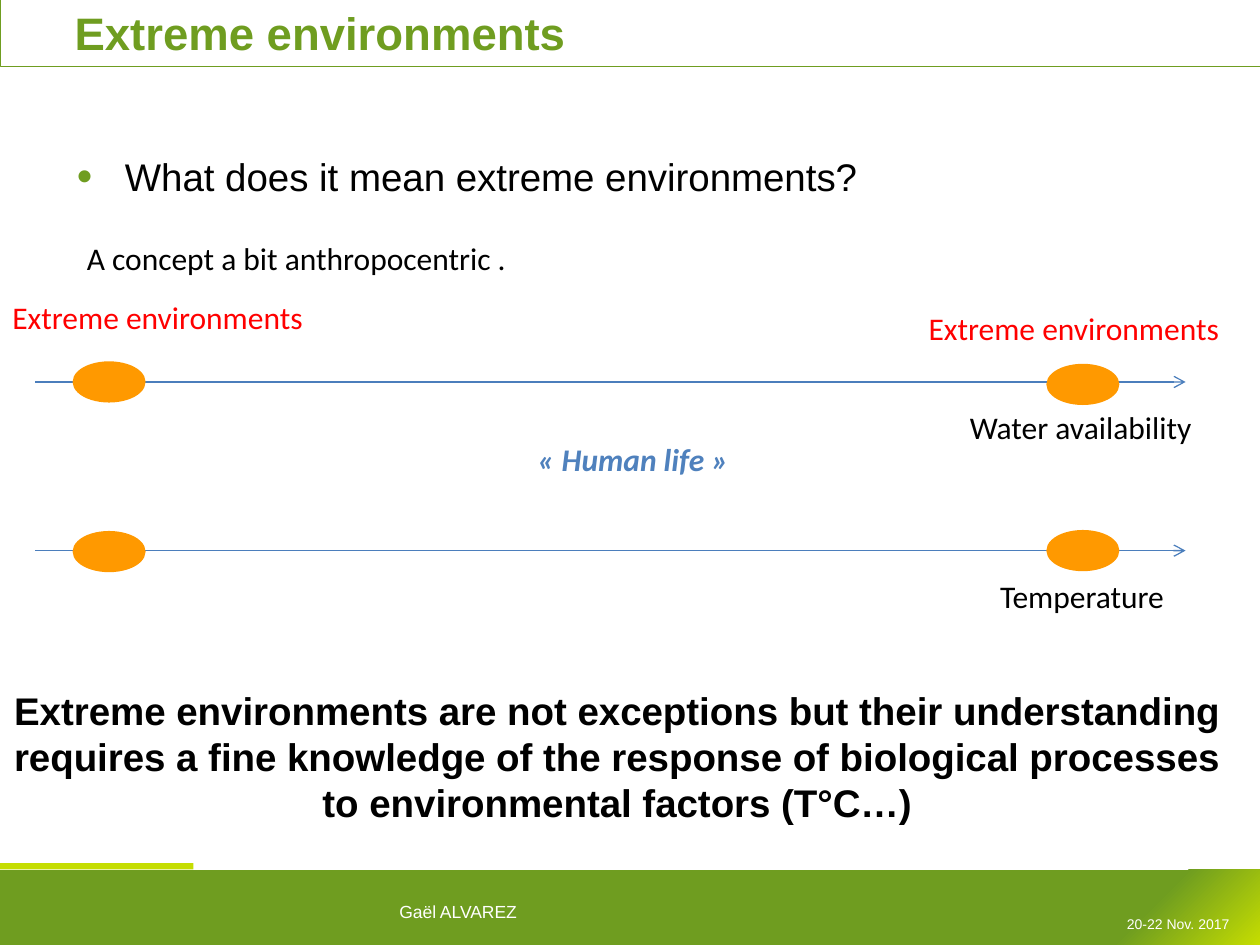
from lxml.etree import SubElement
from pptx import Presentation
from pptx.dml.color import RGBColor
from pptx.enum.shapes import MSO_CONNECTOR as Connector, MSO_SHAPE as Shape
from pptx.enum.text import MSO_ANCHOR as Anchor, MSO_AUTO_SIZE as AutoSize, PP_ALIGN as Align
from pptx.oxml.ns import qn
from pptx.util import Cm, Pt

COLORS = {
    "green": "6F9D20",
    "lime": "C5DD01",
    "white": "FFFFFF",
    "black": "000000",
    "red": "FF0000",
    "blue": "4F81BD",
    "axis": "4B7EBC",
    "orange": "FF9900",
}


def color(name):
    return RGBColor.from_string(COLORS[name])


def style_text(para, size, font, tone, bold=False, italic=False):
    for span in para.runs:
        span.font.size = Pt(size)
        span.font.name = font
        span.font.color.rgb = color(tone)
        span.font.bold = bold
        span.font.italic = italic


def add_text(page, text, place, size, font, tone, wrap=True, align=Align.LEFT, **emphasis):
    box = page.shapes.add_textbox(*map(Cm, place))
    box.text_frame.word_wrap = wrap
    para = box.text_frame.paragraphs[0]
    para.text = text
    para.alignment = align
    style_text(para, size, font, tone, **emphasis)
    return para


def add_label(page, text, left, top, width, tone="black", **emphasis):
    add_text(page, text, (left, top, width, 1.02), 18, "Calibri", tone, wrap=False, **emphasis)


def add_block(page, kind, place, tone):
    block = page.shapes.add_shape(kind, *map(Cm, place))
    block.shadow.inherit = False
    block.fill.solid()
    block.fill.fore_color.rgb = color(tone)
    block.line.fill.background()
    return block


def add_corner_glow(block):
    block.fill.gradient()
    gradient = block.fill._xPr.find(qn("a:gradFill"))
    for child in list(gradient):
        gradient.remove(child)
    stops = SubElement(gradient, qn("a:gsLst"))
    for position, tone in ((0, "lime"), (11000, "green"), (100000, "green")):
        stop = SubElement(stops, qn("a:gs"), pos=str(position))
        SubElement(stop, qn("a:srgbClr"), val=COLORS[tone])
    shade = SubElement(gradient, qn("a:path"), path="circle")
    SubElement(shade, qn("a:fillToRect"), l="100000", t="100000")


def add_footer(page):
    band = add_block(page, Shape.RECTANGLE, (0, 17.53, 25.4, 1.52), "green")
    add_corner_glow(band)
    add_block(page, Shape.RECTANGLE, (0, 17.4, 3.9, 0.13), "lime")
    add_text(page, "Gaël ALVAREZ", (7.8, 18.03, 11.48, 0.69), 10, "Arial", "white")
    add_text(page, "20-22 Nov. 2017", (19.76, 18.34, 5.28, 0.61), 8, "Arial", "white",
             align=Align.RIGHT)


def set_title(page, text):
    title = page.shapes.title
    title.left, title.top, title.width, title.height = map(Cm, (0, -0.03, 25.4, 1.37))
    title.line.color.rgb = color("green")
    title.line.width = Pt(0.5)
    frame = title.text_frame
    frame.text = text
    frame.auto_size = AutoSize.NONE
    frame.vertical_anchor = Anchor.MIDDLE
    para = frame.paragraphs[0]
    para.alignment = Align.LEFT
    para._p.get_or_add_pPr().set("marL", str(Cm(1.25)))
    style_text(para, 26, "Arial", "green", bold=True)


def add_bullet(para):
    properties = para._p.get_or_add_pPr()
    properties.set("marL", str(Cm(0.97)))
    properties.set("indent", str(-Cm(0.97)))
    tint = SubElement(properties, qn("a:buClr"))
    SubElement(tint, qn("a:srgbClr"), val=COLORS["green"])
    SubElement(properties, qn("a:buSzPct"), val="115000")
    SubElement(properties, qn("a:buFont"), typeface="Arial")
    SubElement(properties, qn("a:buChar"), char="•")


def add_axis(page, height):
    axis = page.shapes.add_connector(
        Connector.STRAIGHT, Cm(0.71), Cm(height), Cm(23.9), Cm(height))
    axis.line.color.rgb = color("axis")
    axis.line.width = Pt(0.75)
    SubElement(axis.line._get_or_add_ln(), qn("a:tailEnd"), type="arrow")
    SubElement(axis._element.spPr, qn("a:effectLst"))


def add_marker(page, left, top):
    marker = add_block(page, Shape.OVAL, (left, top, 1.4, 0.76), "orange")
    marker.line.color.rgb = color("orange")
    marker.line.width = Pt(2)


def main():
    deck = Presentation()
    deck.slide_width, deck.slide_height = Cm(25.4), Cm(19.05)
    page = deck.slides.add_slide(deck.slide_layouts[5])

    add_footer(page)
    set_title(page, "Extreme environments")
    question = add_text(page, "What does it mean extreme environments?",
                        (1.3, 2.97, 23.19, 1.2), 22, "Arial", "black")
    add_bullet(question)

    for height in (7.7, 11.1):
        add_axis(page, height)
    for left, top in ((1.5, 7.32), (1.5, 10.74), (21.13, 10.72), (21.13, 7.37)):
        add_marker(page, left, top)

    add_label(page, "A concept a bit anthropocentric .", 1.5, 4.7, 9.37)
    add_label(page, "Water availability", 19.3, 8.1, 5.03)
    add_label(page, "Temperature", 19.91, 11.51, 3.86)
    add_label(page, "« Human life »", 10.59, 8.74, 4.42, "blue", bold=True, italic=True)
    for left, top in ((0, 5.89), (18.47, 6.1)):
        add_label(page, "Extreme environments", left, top, 6.43, "red")

    add_text(page, "Extreme environments are not exceptions but their understanding requires "
             "a fine knowledge of the response of biological processes to environmental "
             "factors (T°C…)", (0, 13.72, 24.89, 3.07), 22, "Arial", "black",
             align=Align.CENTER, bold=True)
    deck.save("out.pptx")


if __name__ == "__main__":
    main()
